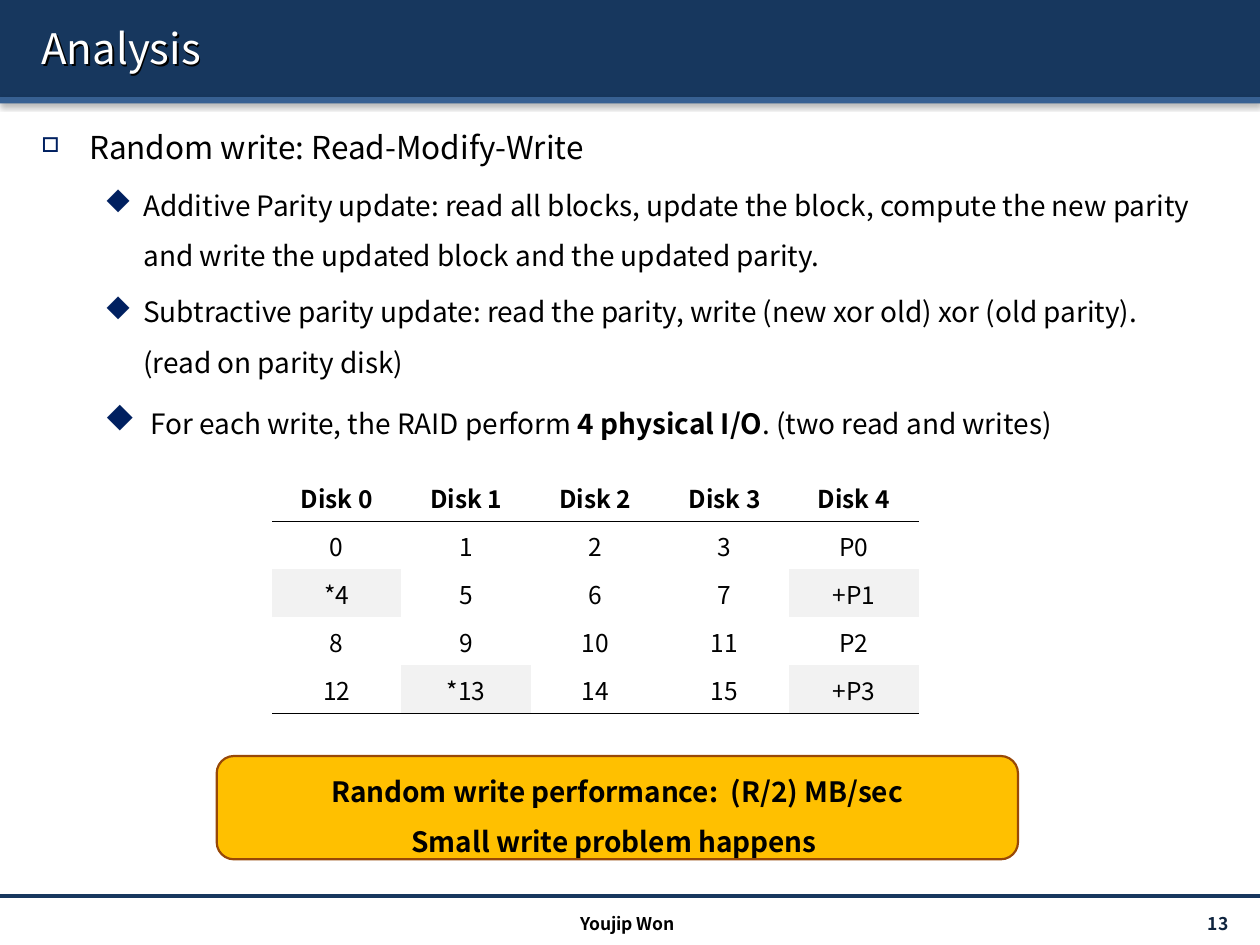
from lxml import etree
from pptx import Presentation
from pptx.dml.color import RGBColor
from pptx.enum.shapes import MSO_CONNECTOR, MSO_SHAPE
from pptx.enum.text import MSO_ANCHOR, PP_ALIGN
from pptx.oxml import parse_xml
from pptx.oxml.ns import nsdecls, qn
from pptx.util import Inches, Pt

FONT = "Noto Sans CJK KR"
BULLET_FONT = "Wingdings"
NAVY = RGBColor(0x17, 0x37, 0x5E)
BLUE = RGBColor(0x37, 0x60, 0x92)
BULLET = RGBColor(0x00, 0x20, 0x60)
NUMBER = RGBColor(0x0F, 0x24, 0x3E)
GOLD = RGBColor(0xFF, 0xC0, 0x00)
BROWN = RGBColor(0x98, 0x48, 0x07)
GRAY = RGBColor(0xF2, 0xF2, 0xF2)
BLACK = RGBColor(0x00, 0x00, 0x00)
WHITE = RGBColor(0xFF, 0xFF, 0xFF)
PLAIN_TABLE = "{2D5ABB26-0587-4C30-8999-92F81FD0307C}"


def shadow(blur, dist, angle, alpha):
    return parse_xml(
        f'<a:effectLst {nsdecls("a")}><a:outerShdw blurRad="{Pt(blur)}" dist="{Pt(dist)}" '
        f'dir="{angle * 60000}" algn="tl" rotWithShape="0"><a:srgbClr val="{BLACK}">'
        f'<a:alpha val="{alpha * 1000}"/></a:srgbClr></a:outerShdw></a:effectLst>')


class SlideBuilder:
    def __init__(self, slide, font=FONT):
        self.s = slide
        self.font = font

    def run(self, p, text, size, color=BLACK, bold=False):
        r = p.add_run()
        r.text = text
        r.font.name = self.font
        r.font.size = Pt(size)
        r.font.bold = bold
        r.font.color.rgb = color

    def text(self, x, y, w, h, anchor=MSO_ANCHOR.TOP):
        sp = self.s.shapes.add_textbox(Inches(x), Inches(y), Inches(w), Inches(h))
        tf = sp.text_frame
        tf.word_wrap = True
        tf.vertical_anchor = anchor
        return sp

    def label(self, box, text, size, color=BLACK, bold=False,
              align=PP_ALIGN.LEFT, anchor=MSO_ANCHOR.MIDDLE):
        sp = self.text(*box, anchor)
        p = sp.text_frame.paragraphs[0]
        p.alignment = align
        self.run(p, text, size, color, bold)
        return sp

    def title(self, box, text):
        sp = self.label(box, text, 24, WHITE)
        sp._element.spPr.append(shadow(0, 1.5, 45, 100))

    def shape(self, kind, x, y, w, h, fill):
        sp = self.s.shapes.add_shape(kind, Inches(x), Inches(y), Inches(w), Inches(h))
        sp.shadow.inherit = False
        sp.fill.solid()
        sp.fill.fore_color.rgb = fill
        sp.line.fill.background()
        return sp

    def band(self, y, h, fill):
        sp = self.shape(MSO_SHAPE.RECTANGLE, 0, y, 10, h, fill)
        spPr = sp._element.spPr
        spPr.remove(spPr.find(qn("a:effectLst")))
        spPr.append(shadow(3.1, 1.6, 90, 38))

    def rule(self, y, color, width):
        c = self.s.shapes.add_connector(
            MSO_CONNECTOR.STRAIGHT, 0, Inches(y), Inches(10), Inches(y))
        c.line.color.rgb = color
        c.line.width = Pt(width)
        etree.SubElement(c._element.spPr, qn("a:effectLst"))

    def bullets(self, box, items):
        tf = self.text(*box).text_frame
        for i, (level, runs) in enumerate(items):
            p = tf.add_paragraph() if i else tf.paragraphs[0]
            left, hang, char, scale = [(0.38, 0.38, "o", 65), (0.81, 0.31, "u", 100)][level]
            p.level = level
            p.line_spacing = 1.5
            if i:
                p.space_before = Pt(3.2)
            pPr = p._p.get_or_add_pPr()
            pPr.set("marL", str(Inches(left)))
            pPr.set("indent", str(-Inches(hang)))
            color = etree.SubElement(pPr, qn("a:buClr"))
            etree.SubElement(color, qn("a:srgbClr"), val=str(BULLET))
            etree.SubElement(pPr, qn("a:buSzPct"), val=str(scale * 1000))
            etree.SubElement(pPr, qn("a:buFont"), typeface=BULLET_FONT,
                             pitchFamily="2", charset="2")
            etree.SubElement(pPr, qn("a:buChar"), char=char)
            for text, size, bold in runs:
                self.run(p, text, size, bold=bold)

    def bottom_border(self, cell):
        cell._tc.get_or_add_tcPr().insert(0, parse_xml(
            f'<a:lnB {nsdecls("a")} w="{Pt(0.75)}"><a:solidFill>'
            f'<a:srgbClr val="{BLACK}"/></a:solidFill></a:lnB>'))

    def table(self, x, y, w, row_h, rows):
        n, m = len(rows), len(rows[0])
        tbl = self.s.shapes.add_table(
            n, m, Inches(x), Inches(y), Inches(w), Inches(row_h * n)).table
        tbl.first_row = tbl.horz_banding = False
        tbl._tbl.tblPr.find(qn("a:tableStyleId")).text = PLAIN_TABLE
        for i, row in enumerate(rows):
            for j, text in enumerate(row):
                cell = tbl.cell(i, j)
                cell.fill.solid()
                cell.fill.fore_color.rgb = GRAY if text[0] in "*+" else WHITE
                p = cell.text_frame.paragraphs[0]
                p.alignment = PP_ALIGN.CENTER
                self.run(p, text, 14, bold=i == 0)
                if i in (0, n - 1):
                    self.bottom_border(cell)

    def callout(self, box, lines):
        sp = self.shape(MSO_SHAPE.ROUNDED_RECTANGLE, *box, GOLD)
        sp.line.color.rgb = BROWN
        sp.line.width = Pt(1.25)
        tf = sp.text_frame
        tf.word_wrap = True
        tf.vertical_anchor = MSO_ANCHOR.MIDDLE
        tf.margin_left = tf.margin_right = Inches(0.12)
        for i, text in enumerate(lines):
            p = tf.add_paragraph() if i else tf.paragraphs[0]
            p.alignment = PP_ALIGN.CENTER
            p.line_spacing = 1.5
            self.run(p, text, 16, bold=True)


def main():
    prs = Presentation()
    prs.slide_width, prs.slide_height = Inches(10), Inches(7.5)
    b = SlideBuilder(prs.slides.add_slide(prs.slide_layouts[6]))

    b.band(0, 0.77, NAVY)
    b.band(0.77, 0.05, BLUE)
    b.rule(7.11, NAVY, 2)
    b.title((0.23, 0.06, 9.61, 0.64), "Analysis")
    b.bullets((0.23, 0.82, 9.33, 6.02), [
        (0, [("Random write: Read-Modify-Write", 18, False)]),
        (1, [("Additive Parity update: read all blocks, update the block, compute the new "
              "parity and write the updated block and the updated parity.", 16, False)]),
        (1, [("Subtractive parity update: read the parity, write (new xor old) xor "
              "(old parity). (read on parity disk)", 16, False)]),
        (1, [(" ", 18, False),
             ("For each write, the RAID perform ", 16, False),
             ("4 physical I/O", 16, True),
             (". (two read and writes)", 16, False)]),
    ])
    b.label((8.71, 7.21, 1.17, 0.24), "13 ", 10, NUMBER, True, PP_ALIGN.RIGHT)
    b.label((3.32, 7.2, 3.32, 0.24), "Youjip Won", 10, BLACK, True,
            PP_ALIGN.CENTER, MSO_ANCHOR.TOP)
    b.table(2.16, 3.76, 5.13, 0.38, [
        [f"Disk {i}" for i in range(5)],
        ["0", "1", "2", "3", "P0"],
        ["*4", "5", "6", "7", "+P1"],
        ["8", "9", "10", "11", "P2"],
        ["12", "*13", "14", "15", "+P3"],
    ])
    b.callout((1.72, 6, 6.36, 0.82), [
        "Random write performance:  (R/2) MB/sec",
        "Small write problem happens ",
    ])
    prs.save("out.pptx")


if __name__ == "__main__":
    main()
